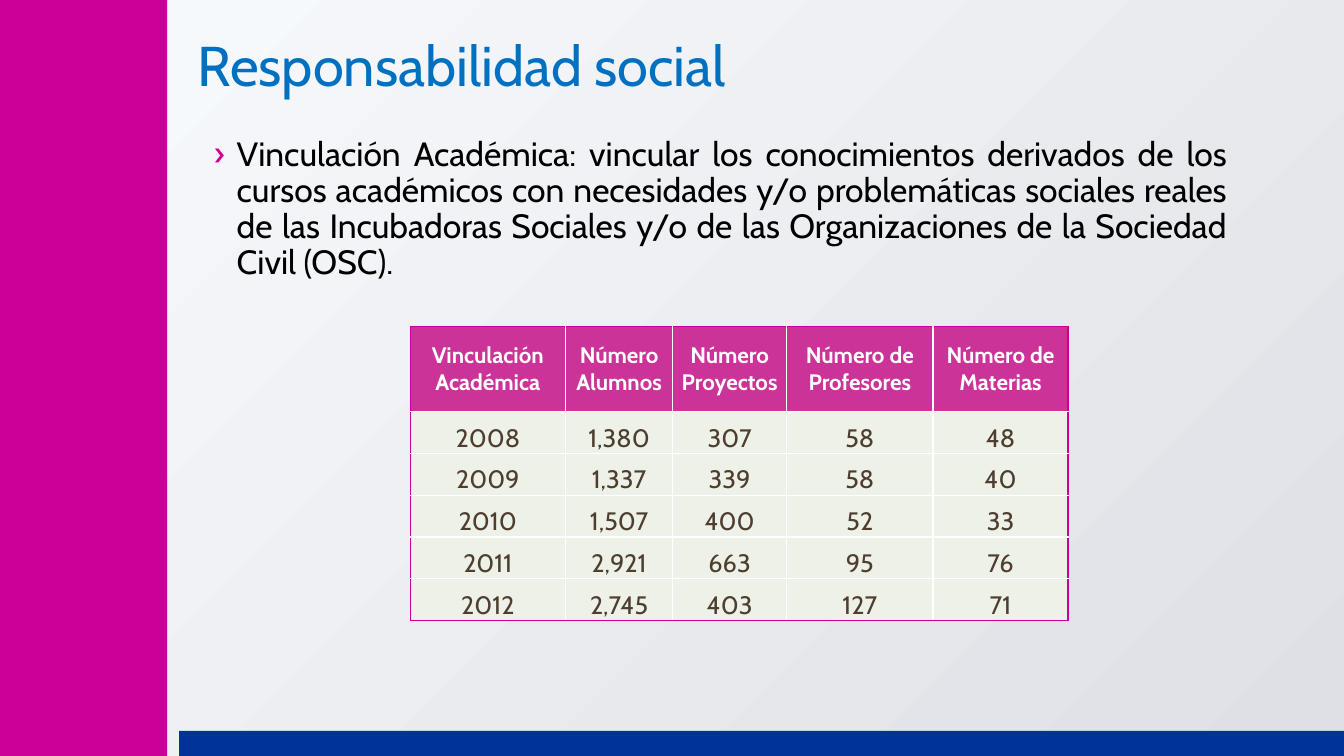
from lxml import etree
from pptx import Presentation
from pptx import util as u
from pptx.dml.color import RGBColor
from pptx.enum import shapes, text
from pptx.oxml import ns

Pt = u.Pt
FONT = "Cabin"
MAGENTA = "CC0099"
WHITE = "FFFFFF"
HEADERS = ["Vinculación Académica", "Número Alumnos", "Número Proyectos",
           "Número de Profesores", "Número de Materias"]
YEARS = [
    ["2008", "1,380", "307", "58", "48"],
    ["2009", "1,337", "339", "58", "40"],
    ["2010", "1,507", "400", "52", "33"],
    ["2011", "2,921", "663", "95", "76"],
    ["2012", "2,745", "403", "127", "71"],
]
COLUMN_WIDTHS = [111, 76.5, 81.5, 104.5, 96.5]
HEADER_HEIGHT, YEAR_HEIGHT = 61, 29.9


def color(value):
    return RGBColor.from_string(value)


def add_child(parent, tag, **attributes):
    return etree.SubElement(parent, ns.qn(tag), attributes)


def set_background(slide, start, end):
    fill = slide.background.fill
    fill.gradient()
    fill.gradient_angle = 315
    for stop, value in zip(fill.gradient_stops, (start, end)):
        stop.color.rgb = color(value)


def add_band(slide, left, top, width, height, fill):
    band = slide.shapes.add_shape(shapes.MSO_SHAPE.RECTANGLE,
                                  Pt(left), Pt(top), Pt(width), Pt(height))
    band.shadow.inherit = False
    band.fill.solid()
    band.fill.fore_color.rgb = color(fill)
    band.line.fill.background()


def add_run(paragraph, words, size, value, bold=False):
    run = paragraph.add_run()
    run.text = words
    run.font.name = FONT
    run.font.size = Pt(size)
    run.font.bold = bold
    run.font.color.rgb = color(value)


def add_text_frame(slide, left, top, width, height, anchor):
    box = slide.shapes.add_textbox(Pt(left), Pt(top), Pt(width), Pt(height))
    frame = box.text_frame
    frame.word_wrap = True
    frame.vertical_anchor = anchor
    return frame


def add_title(slide, words):
    frame = add_text_frame(slide, 134, 4.3, 788, 69, text.MSO_ANCHOR.BOTTOM)
    paragraph = frame.paragraphs[0]
    paragraph.line_spacing = Pt(40)
    add_run(paragraph, words, 40, "0070C0")


def add_bullet(slide, words):
    frame = add_text_frame(slide, 145.5, 94.3, 738, 363.6, text.MSO_ANCHOR.TOP)
    paragraph = frame.paragraphs[0]
    paragraph.alignment = text.PP_ALIGN.JUSTIFY
    paragraph.line_spacing = 0.9
    properties = paragraph._p.get_or_add_pPr()
    properties.set("marL", str(Pt(16.5)))
    properties.set("indent", str(-Pt(16.5)))
    add_child(add_child(properties, "a:buClr"), "a:srgbClr", val=MAGENTA)
    add_child(properties, "a:buFont", typeface=FONT)
    add_child(properties, "a:buChar", char="›")
    add_run(paragraph, words, 24, "000000")


def set_borders(cell, outer_sides):
    """Draw 1 pt borders: magenta on the outer sides, white elsewhere."""
    properties = cell._tc.get_or_add_tcPr()
    for position, side in enumerate("LRTB"):
        line = etree.Element(ns.qn("a:ln" + side), w=str(Pt(1)))
        fill = add_child(line, "a:solidFill")
        add_child(fill, "a:srgbClr", val=MAGENTA if side in outer_sides else WHITE)
        properties.insert(position, line)


def fill_cell(cell, words, is_header, outer_sides):
    cell.margin_left = cell.margin_right = cell.margin_top = Pt(0.7)
    cell.margin_bottom = Pt(0)
    cell.vertical_anchor = text.MSO_ANCHOR.MIDDLE if is_header else text.MSO_ANCHOR.BOTTOM
    cell.fill.solid()
    cell.fill.fore_color.rgb = color("CC3399" if is_header else "EEF1E7")
    set_borders(cell, outer_sides)
    paragraph = cell.text_frame.paragraphs[0]
    paragraph.alignment = text.PP_ALIGN.CENTER
    if is_header:
        add_run(paragraph, words, 16, WHITE, bold=True)
    else:
        add_run(paragraph, words, 18, "4D3E2F")


def add_results_table(slide, left, top):
    rows = [HEADERS] + YEARS
    heights = [HEADER_HEIGHT] + [YEAR_HEIGHT] * len(YEARS)
    last_row, last_column = len(rows) - 1, len(HEADERS) - 1
    table = slide.shapes.add_table(len(rows), len(HEADERS), Pt(left), Pt(top),
                                   Pt(sum(COLUMN_WIDTHS)), Pt(sum(heights))).table
    table.first_row = table.horz_banding = False
    for column, width in zip(table.columns, COLUMN_WIDTHS):
        column.width = Pt(width)
    for r, (values, height) in enumerate(zip(rows, heights)):
        table.rows[r].height = Pt(height)
        for c, words in enumerate(values):
            edges = {"L": c == 0, "R": c == last_column, "T": r == 0, "B": r == last_row}
            outer_sides = [side for side, outer in edges.items() if outer]
            fill_cell(table.cell(r, c), words, r == 0, outer_sides)


def main():
    deck = Presentation()
    deck.slide_width, deck.slide_height = Pt(960), Pt(540)
    slide = deck.slides.add_slide(deck.slide_layouts[6])
    set_background(slide, "F8FBFE", "DFE0E5")
    add_band(slide, 128, 522, 832, 18, "003399")
    add_band(slide, 0, 0, 119.5, 540, MAGENTA)
    add_title(slide, "Responsabilidad social")
    add_bullet(slide, "Vinculación Académica: vincular los conocimientos derivados de los "
                      "cursos académicos con necesidades y/o problemáticas sociales reales "
                      "de las Incubadoras Sociales y/o de las Organizaciones de la Sociedad "
                      "Civil (OSC).")
    add_results_table(slide, 293, 233)
    deck.save("out.pptx")


if __name__ == "__main__":
    main()
